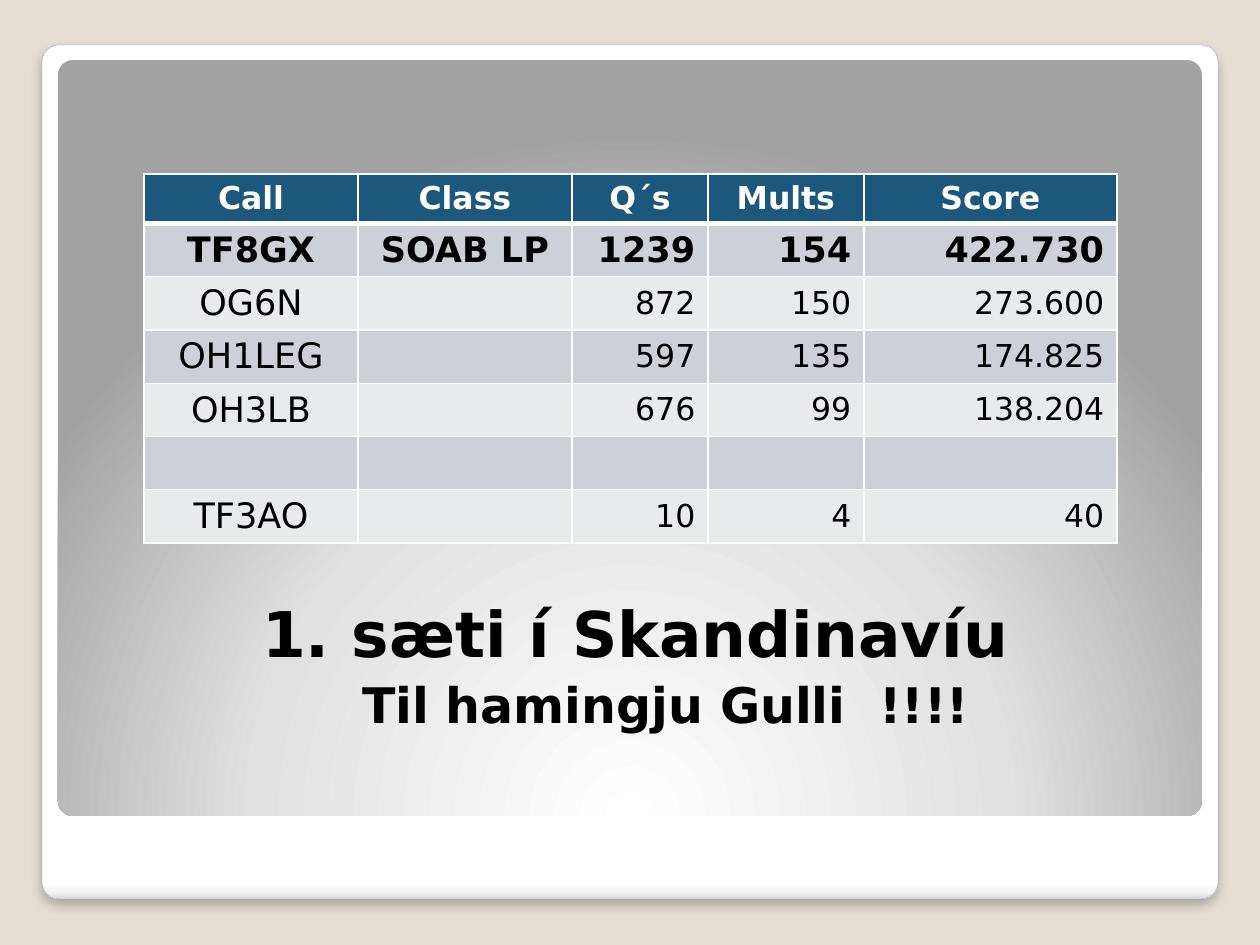
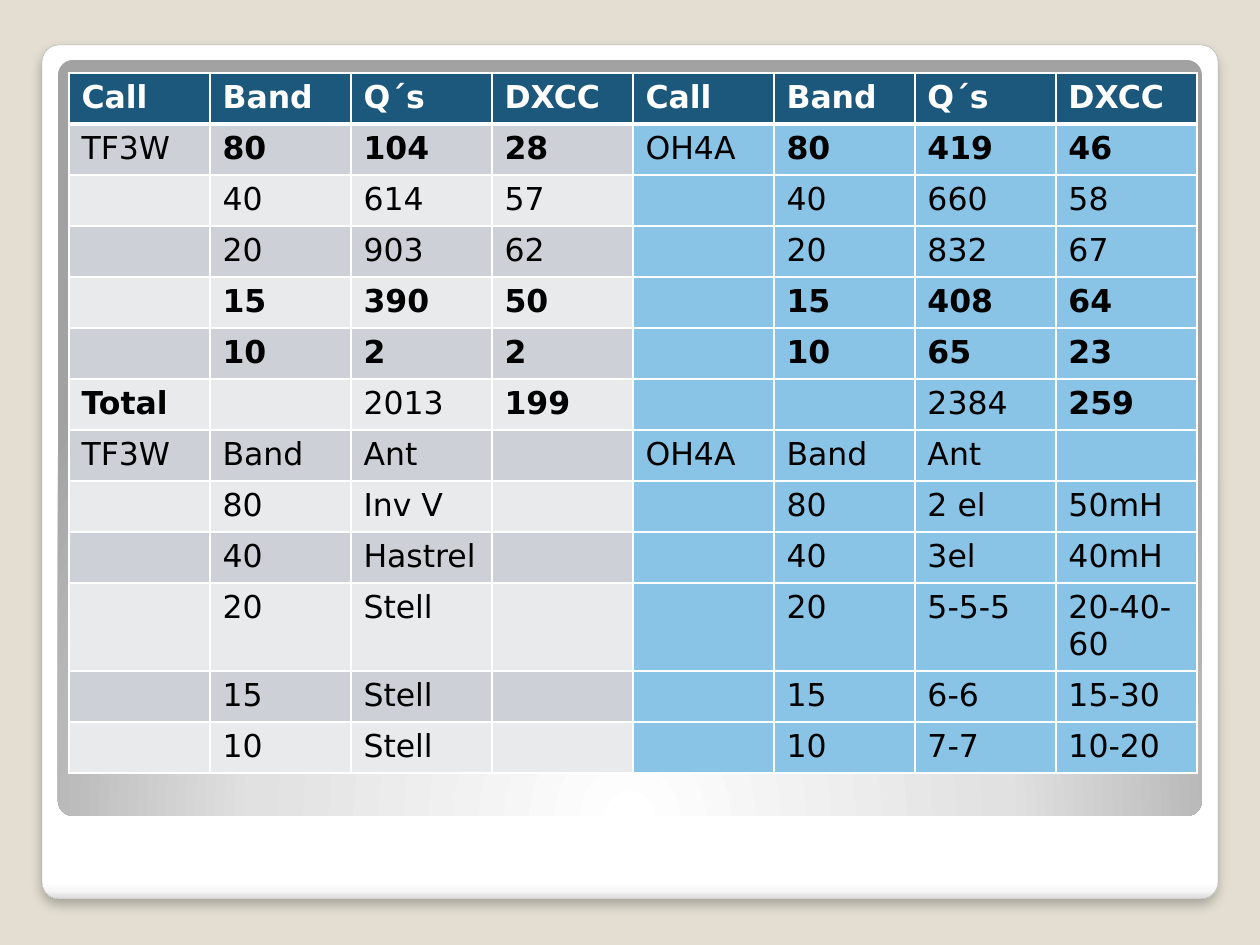
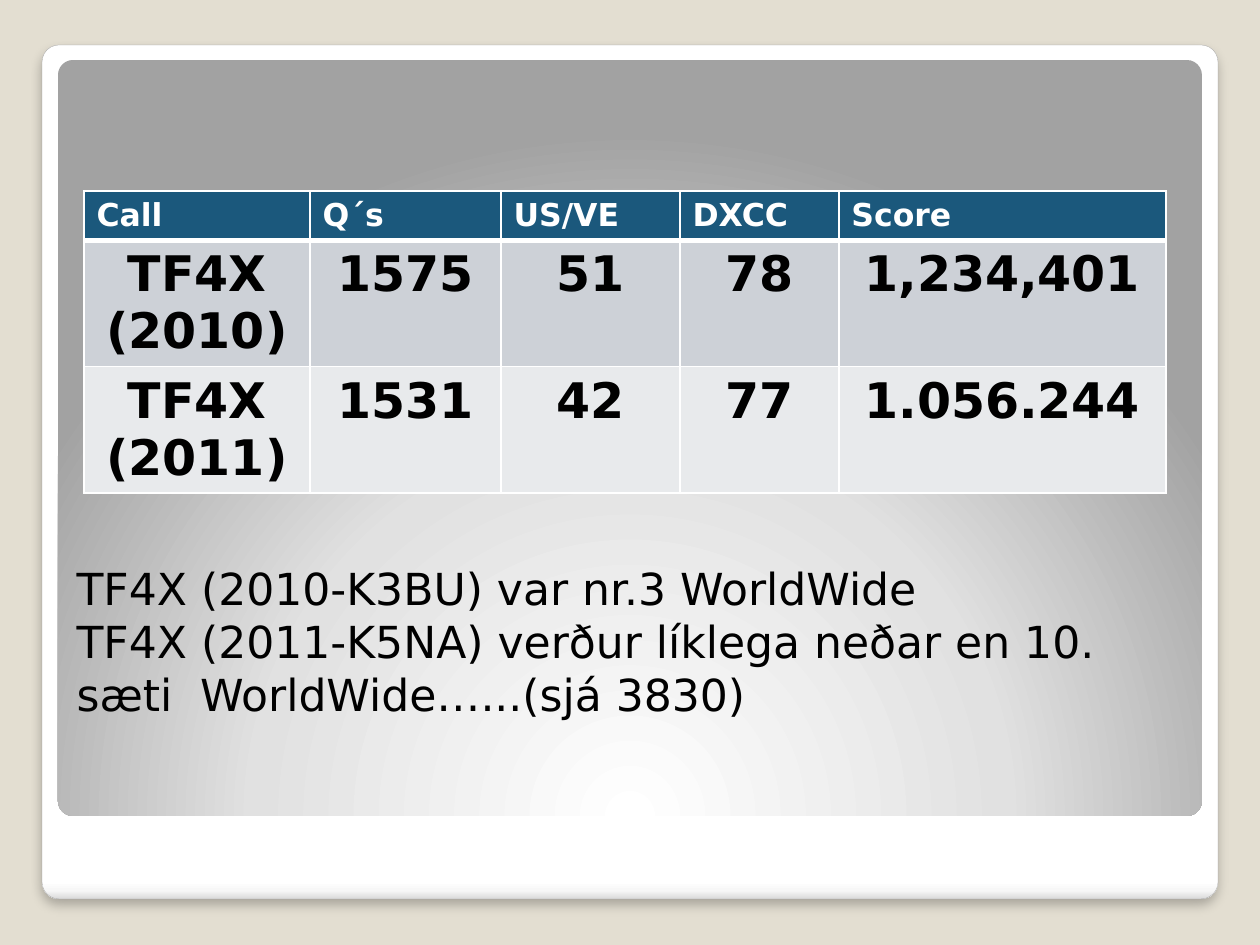
import dataclasses

import lxml.etree
import pptx
import pptx.dml.color
import pptx.enum.shapes
import pptx.enum.text
import pptx.oxml
import pptx.oxml.ns
import pptx.util

EMU_PER_PX = 914400 / 126
FONT = "DejaVu Sans"
INK, WHITE = "000000", "FFFFFF"
PAPER, EDGE = "E3DED1", "A4A4A4"
HEADER, BAND_DARK, BAND_LIGHT, RIVAL = "1B587C", "CDD1D7", "E8EAEC", "89C3E5"
ALIGN = pptx.enum.text.PP_ALIGN
ANCHOR = pptx.enum.text.MSO_ANCHOR

SCANDINAVIA = [
    ["Call", "Class", "Q´s", "Mults", "Score"],
    ["TF8GX", "SOAB LP", "1239", "154", "422.730"],
    ["OG6N", "", "872", "150", "273.600"],
    ["OH1LEG", "", "597", "135", "174.825"],
    ["OH3LB", "", "676", "99", "138.204"],
    ["", "", "", "", ""],
    ["TF3AO", "", "10", "4", "40"],
]
STATIONS = [
    ["Call", "Band", "Q´s", "DXCC", "Call", "Band", "Q´s", "DXCC"],
    ["TF3W", "80", "104", "28", "OH4A", "80", "419", "46"],
    ["", "40", "614", "57", "", "40", "660", "58"],
    ["", "20", "903", "62", "", "20", "832", "67"],
    ["", "15", "390", "50", "", "15", "408", "64"],
    ["", "10", "2", "2", "", "10", "65", "23"],
    ["Total", "", "2013", "199", "", "", "2384", "259"],
    ["TF3W", "Band", "Ant", "", "OH4A", "Band", "Ant", ""],
    ["", "80", "Inv V", "", "", "80", "2 el", "50mH"],
    ["", "40", "Hastrel", "", "", "40", "3el", "40mH"],
    ["", "20", "Stell", "", "", "20", "5-5-5", "20-40-60"],
    ["", "15", "Stell", "", "", "15", "6-6", "15-30"],
    ["", "10", "Stell", "", "", "10", "7-7", "10-20"],
]
YEARS = [
    ["Call", "Q´s", "US/VE", "DXCC", "Score"],
    ["TF4X (2010)", "1575", "51", "78", "1,234,401"],
    ["TF4X (2011)", "1531", "42", "77", "1.056.244"],
]


@dataclasses.dataclass
class CellStyle:
    """Look of one table cell; without a fill it follows the row bands."""
    size: float = 18
    bold: bool = False
    align: ALIGN = ALIGN.LEFT
    anchor: ANCHOR = ANCHOR.TOP
    fill: str = ""


def px(length):
    """Turn pixels into EMU."""
    return pptx.util.Emu(round(length * EMU_PER_PX))


def color(hex_code):
    """Turn a hex string into a colour."""
    return pptx.dml.color.RGBColor.from_string(hex_code)


def xml(markup):
    """Read a piece of DrawingML."""
    return pptx.oxml.parse_xml(markup.replace(">", f" {pptx.oxml.ns.nsdecls('a')}>", 1))


def format_runs(paragraph, size, bold=False, ink=INK):
    """Give every run of a paragraph the deck's font."""
    for run in paragraph.runs:
        run.font.name = FONT
        run.font.size = pptx.util.Pt(size)
        run.font.bold = bold
        run.font.color.rgb = color(ink)


def add_panel(slide, box, stops, direction):
    """Add a rounded panel with a gradient fill."""
    panel = slide.shapes.add_shape(
        pptx.enum.shapes.MSO_SHAPE.ROUNDED_RECTANGLE, *map(px, box))
    panel.adjustments[0] = 0.02
    panel.shadow.inherit = False
    panel.line.fill.background()
    marks = "".join(f'<a:gs pos="{place * 1000}"><a:srgbClr val="{tint}"/></a:gs>'
                    for place, tint in stops)
    gradient = xml(f'<a:gradFill rotWithShape="1"><a:gsLst>{marks}</a:gsLst>{direction}</a:gradFill>')
    panel.element.spPr.find(pptx.oxml.ns.qn("a:prstGeom")).addnext(gradient)
    return panel


def add_frame(prs, slide):
    """Build the card and its grey field once and keep them on the master."""
    card = add_panel(slide, (42, 45, 1176, 854),
                     [(0, WHITE), (98, WHITE), (99, "F7F7F7"), (100, "DADADA")],
                     '<a:lin ang="5400000" scaled="0"/>')
    card.line.color.rgb = color(EDGE)
    card.line.width = pptx.util.Pt(0.16)
    card.element.spPr.find(pptx.oxml.ns.qn("a:effectLst")).append(xml(
        '<a:outerShdw blurRad="76200" dist="50800" dir="5400000" algn="t" rotWithShape="0">'
        f'<a:srgbClr val="{INK}"><a:alpha val="25000"/></a:srgbClr></a:outerShdw>'))
    field = add_panel(slide, (58, 60, 1144, 756),
                      [(0, WHITE), (55, "E1E1E1"), (100, "A2A2A2")],
                      '<a:path path="circle"><a:fillToRect l="50000" t="175000" '
                      'r="50000" b="-75000"/></a:path>')
    master = prs.slide_master
    master.background.fill.solid()
    master.background.fill.fore_color.rgb = color(PAPER)
    for order, panel in enumerate((card, field)):
        panel.element.nvSpPr.cNvPr.set("id", str(100 + order))
        master.shapes.element.insert(2 + order, panel.element)


def set_borders(cell, row):
    """Draw white cell borders, heavier below the header row."""
    widths = {"L": 1, "R": 1, "T": 3 if row == 1 else 1, "B": 3 if row == 0 else 1}
    properties = cell._tc.get_or_add_tcPr()
    for order, (side, width) in enumerate(widths.items()):
        properties.insert(order, xml(
            f'<a:ln{side} w="{width * 12700}"><a:solidFill><a:srgbClr val="{WHITE}"/>'
            f'</a:solidFill></a:ln{side}>'))


def add_results(slide, corner, widths, heights, rows, style_of):
    """Add a results table whose cells are styled by row and column."""
    frame = slide.shapes.add_table(len(rows), len(widths), *map(px, corner),
                                   px(sum(widths)), px(sum(heights)))
    table = frame.table
    for column, width in zip(table.columns, widths):
        column.width = px(width)
    for line, height in zip(table.rows, heights):
        line.height = px(height)
    for row, texts in enumerate(rows):
        band = BAND_DARK if row % 2 else BAND_LIGHT
        for col, text in enumerate(texts):
            cell, style = table.cell(row, col), style_of(row, col)
            cell.text_frame.text = text
            cell.vertical_anchor = style.anchor
            cell.fill.solid()
            cell.fill.fore_color.rgb = color(HEADER if row == 0 else style.fill or band)
            paragraph = cell.text_frame.paragraphs[0]
            paragraph.alignment = style.align
            format_runs(paragraph, style.size, style.bold or row == 0,
                        INK if row else WHITE)
            set_borders(cell, row)


def scandinavia_style(row, col):
    """Centre the names, set the figures right and stress the winner."""
    return CellStyle(
        size=20 if row == 1 or (row and col == 0) else 18,
        bold=row == 1,
        align=ALIGN.CENTER if row == 0 or col < 2 else ALIGN.RIGHT,
        anchor=ANCHOR.MIDDLE if row > 1 and col > 1 else ANCHOR.TOP)


def station_style(row, col):
    """Stress the deciding bands and tint the rival's half."""
    deciding_band = row in (1, 4, 5) and col % 4 > 0
    total = row == 6 and col in (0, 3, 7)
    return CellStyle(bold=deciding_band or total, fill=RIVAL if col > 3 else "")


def year_style(row, col):
    """Set the yearly results large and centred."""
    return CellStyle(28, True, ALIGN.CENTER) if row else CellStyle()


def add_congratulation(slide, box, lines):
    """Add bold lines, each given as text, size and indent."""
    frame = slide.shapes.add_textbox(*map(px, box)).text_frame
    frame.word_wrap = True
    frame.margin_left = frame.margin_right = frame.margin_top = frame.margin_bottom = 0
    frame.text = "\n".join(text for text, _, _ in lines)
    for paragraph, (_, size, indent) in zip(frame.paragraphs, lines):
        paragraph.space_before = pptx.util.Pt(2.5)
        paragraph._p.get_or_add_pPr().set("marL", str(px(indent)))
        format_runs(paragraph, size, bold=True)


def set_title(slide, box, text):
    """Move the title placeholder and fill it."""
    title = slide.shapes.title
    title.left, title.top, title.width, title.height = map(px, box)
    frame = title.text_frame
    frame.text = text
    frame.word_wrap = True
    frame.auto_size = pptx.enum.text.MSO_AUTO_SIZE.NONE
    frame.vertical_anchor = ANCHOR.BOTTOM
    for paragraph in frame.paragraphs:
        paragraph.alignment = ALIGN.LEFT
        format_runs(paragraph, 25.2)


def main():
    """Build the three result slides."""
    prs = pptx.Presentation()
    prs.slide_width, prs.slide_height = px(1260), px(945)
    title_only, blank = prs.slide_layouts[5], prs.slide_layouts[6]

    scandinavia = prs.slides.add_slide(blank)
    add_frame(prs, scandinavia)
    add_results(scandinavia, (144, 174), [214, 214, 136, 156, 253], [49] + [53] * 6,
                SCANDINAVIA, scandinavia_style)
    add_congratulation(scandinavia, (262, 595, 860, 140),
                       [("1. sæti í Skandinavíu", 36, 0),
                        ("Til hamingju Gulli  !!!!", 28, 100)])

    stations = prs.slides.add_slide(blank)
    add_results(stations, (69, 73), [141] * 8, [51] * 10 + [86] + [51] * 2,
                STATIONS, station_style)

    years = prs.slides.add_slide(title_only)
    set_title(years, (64, 582, 1128, 145),
              "TF4X (2010-K3BU) var nr.3 WorldWide\n"
              "TF4X (2011-K5NA) verður líklega neðar en 10. sæti  WorldWide…...(sjá 3830)")
    add_results(years, (84, 191), [226, 191, 179, 159, 327], [49, 126, 126],
                YEARS, year_style)

    prs.save("out.pptx")


if __name__ == "__main__":
    main()
